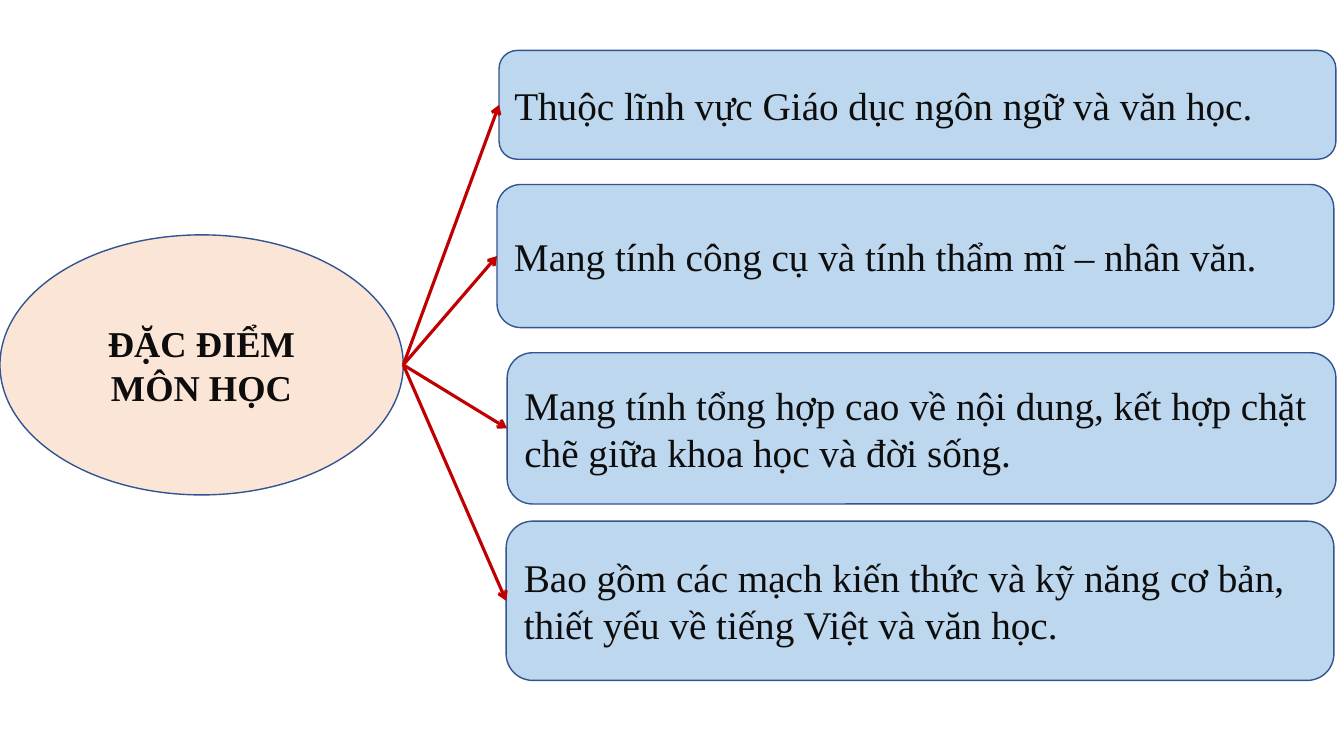
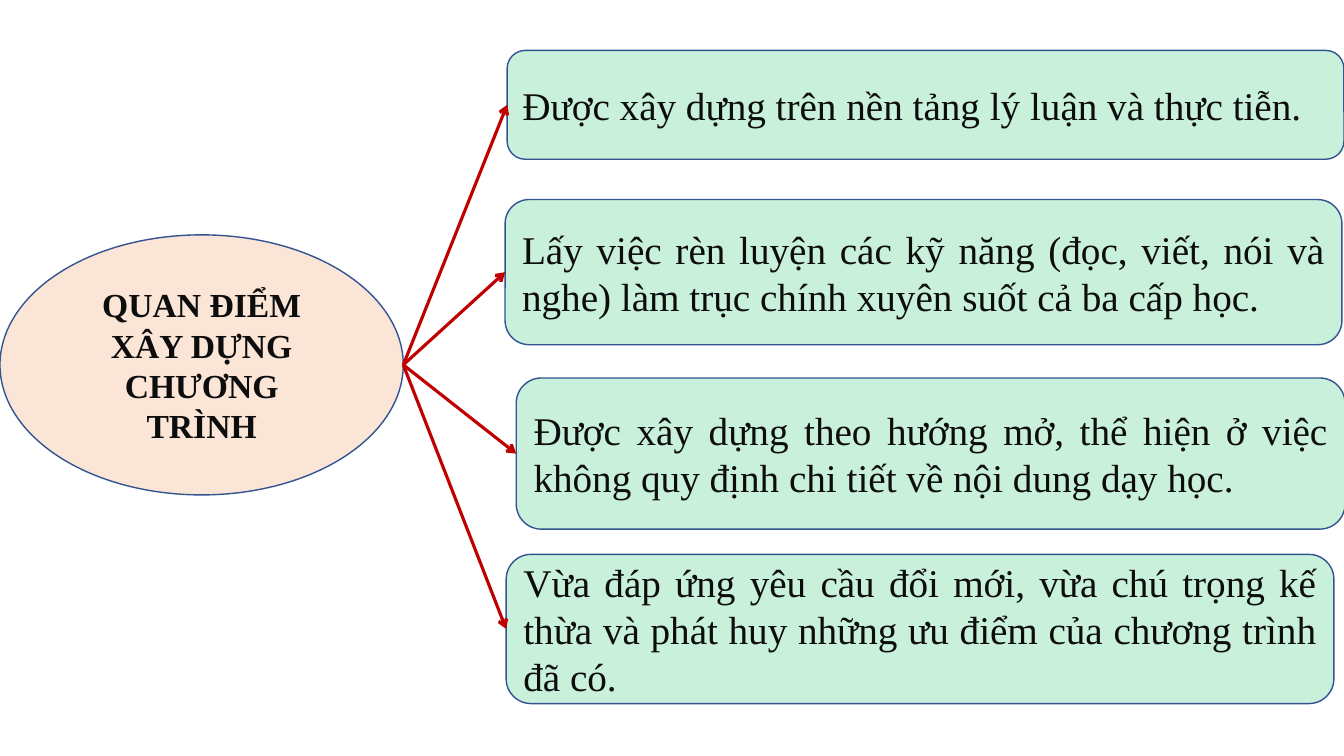
from dataclasses import dataclass

from pptx import Presentation
from pptx.dml.color import RGBColor
from pptx.enum.shapes import MSO_CONNECTOR as Connector, MSO_SHAPE as Shape
from pptx.enum.text import MSO_ANCHOR as Anchor, PP_ALIGN as Align
from pptx.oxml.ns import qn
from pptx.util import Inches, Pt
from lxml.etree import SubElement


@dataclass(frozen=True)
class Theme:
    """Colours, font and sizes shared by the slides."""
    font: str = "Times New Roman"
    ink: str = "0D0D0D"
    outline: str = "325491"
    arrow: str = "C00000"
    topic_fill: str = "FBE5D6"
    blue: str = "BDD7EE"
    green: str = "C8F0DB"
    point_size: float = 28
    outline_width: float = 1
    arrow_width: float = 2.25


THEME = Theme()
TOPIC_BOX = (0, 2.33, 4, 2.58)

MAPS = [
    {
        "topic": "ĐẶC ĐIỂM MÔN HỌC",
        "topic_size": 26,
        "fill": THEME.blue,
        "align": Align.LEFT,
        "points": [
            ((4.95, 0.5, 8.3, 1.08), "Thuộc lĩnh vực Giáo dục ngôn ngữ và văn học."),
            ((4.93, 1.83, 8.3, 1.42), "Mang tính công cụ và tính thẩm mĩ – nhân văn."),
            ((5.03, 3.5, 8.22, 1.5),
             "Mang tính tổng hợp cao về nội dung, kết hợp chặt chẽ giữa khoa học và đời sống."),
            ((5.02, 5.17, 8.21, 1.58),
             "Bao gồm các mạch kiến thức và kỹ năng cơ bản, thiết yếu về tiếng Việt và văn học."),
        ],
    },
    {
        "topic": "QUAN ĐIỂM XÂY DỰNG CHƯƠNG TRÌNH",
        "topic_size": 24,
        "fill": THEME.green,
        "align": Align.JUSTIFY,
        "points": [
            ((5.03, 0.5, 8.3, 1.08), "Được xây dựng trên nền tảng lý luận và thực tiễn."),
            ((5.01, 1.98, 8.3, 1.44),
             "Lấy việc rèn luyện các kỹ năng (đọc, viết, nói và nghe) "
             "làm trục chính xuyên suốt cả ba cấp học."),
            ((5.12, 3.75, 8.22, 1.5),
             "Được xây dựng theo hướng mở, thể hiện ở việc không quy định "
             "chi tiết về nội dung dạy học."),
            ((5.02, 5.5, 8.21, 1.48),
             "Vừa đáp ứng yêu cầu đổi mới, vừa chú trọng kế thừa và phát huy "
             "những ưu điểm của chương trình đã có."),
        ],
    },
]


def write_text(frame, text, *, size, bold=False, align=Align.LEFT):
    """Put one formatted, vertically centred paragraph in a text frame."""
    frame.word_wrap = True
    frame.vertical_anchor = Anchor.MIDDLE
    paragraph = frame.paragraphs[0]
    paragraph.alignment = align
    run = paragraph.add_run()
    run.text = text
    run.font.name = THEME.font
    run.font.size = Pt(size)
    run.font.bold = bold
    run.font.color.rgb = RGBColor.from_string(THEME.ink)


def add_bubble(slide, outline, box, fill, text, **text_format):
    """Add a filled, outlined shape with text in the given box."""
    bubble = slide.shapes.add_shape(outline, *map(Inches, box))
    bubble.shadow.inherit = False
    bubble.fill.solid()
    bubble.fill.fore_color.rgb = RGBColor.from_string(fill)
    bubble.line.color.rgb = RGBColor.from_string(THEME.outline)
    bubble.line.width = Pt(THEME.outline_width)
    write_text(bubble.text_frame, text, **text_format)
    return bubble


def add_arrow(slide, topic, point):
    """Draw an arrow from the right of the topic to the left of a point."""
    x, y = topic.left + topic.width, topic.top + topic.height // 2
    arrow = slide.shapes.add_connector(Connector.STRAIGHT, x, y, x, y)
    arrow.end_connect(point, 1)
    arrow.line.color.rgb = RGBColor.from_string(THEME.arrow)
    arrow.line.width = Pt(THEME.arrow_width)
    properties = arrow.element.spPr
    SubElement(properties.find(qn("a:ln")), qn("a:tailEnd"), type="arrow")
    SubElement(properties, qn("a:effectLst"))


def add_map_slide(deck, topic_box, *, topic, topic_size, fill, align, points):
    """Add a slide with one topic leading to a column of points."""
    slide = deck.slides.add_slide(deck.slide_layouts.get_by_name("Blank"))
    topic_bubble = add_bubble(slide, Shape.OVAL, topic_box, THEME.topic_fill, topic,
                              size=topic_size, bold=True, align=Align.CENTER)
    point_bubbles = [
        add_bubble(slide, Shape.ROUNDED_RECTANGLE, box, fill, text,
                   size=THEME.point_size, align=align)
        for box, text in points
    ]
    for point_bubble in point_bubbles:
        add_arrow(slide, topic_bubble, point_bubble)


def main():
    """Build and save the deck."""
    deck = Presentation()
    deck.slide_width, deck.slide_height = Inches(13.33), Inches(7.5)
    for content in MAPS:
        add_map_slide(deck, TOPIC_BOX, **content)
    deck.save("out.pptx")


if __name__ == "__main__":
    main()
